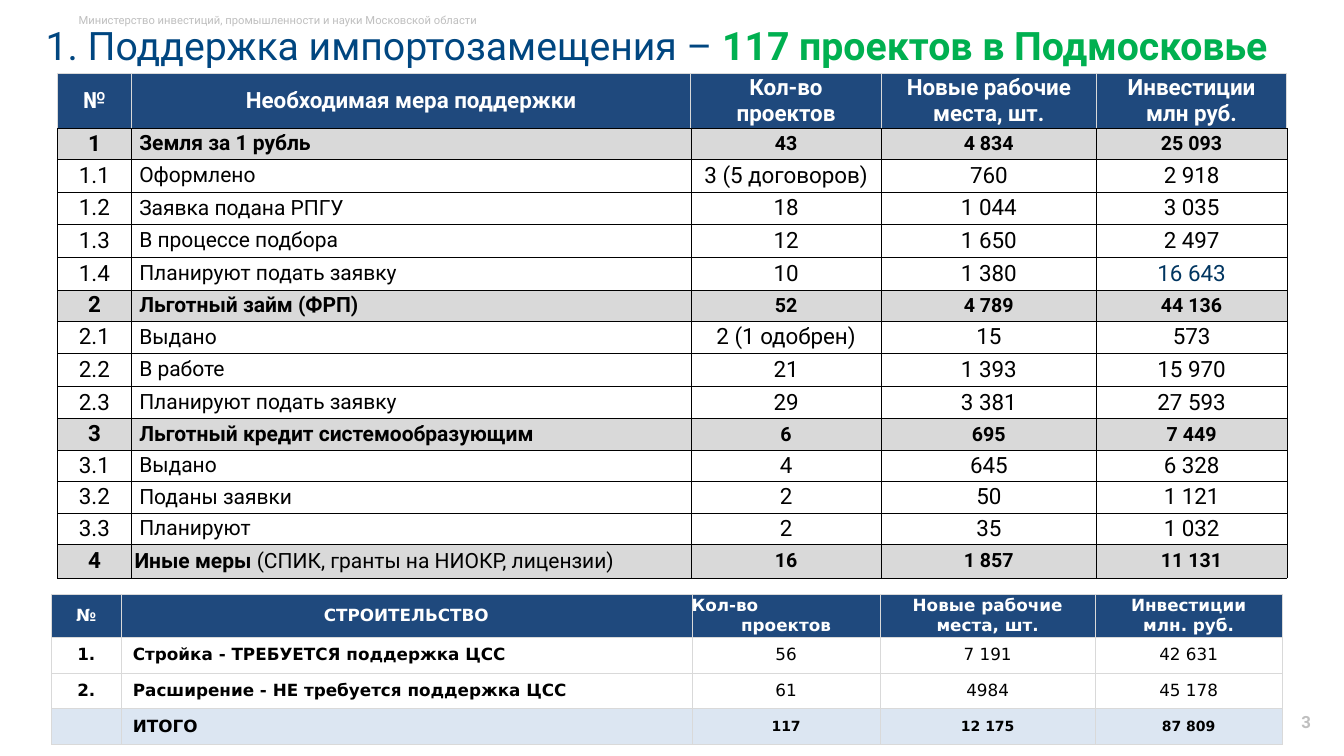
from dataclasses import dataclass

from lxml import etree
from pptx import Presentation
from pptx import util as u
from pptx.dml.color import RGBColor
from pptx.enum import text
from pptx.oxml.ns import qn

ALIGN = text.PP_ALIGN
ANCHOR = text.MSO_ANCHOR
NAVY, WHITE, BLACK, SILVER = "1F497D", "FFFFFF", "000000", "D9D9D9"
PALE_BLUE, FAINT_GRAY = "DCE6F2", "BFBFBF"
ROBOTO, DEJAVU = "Roboto", "DejaVu Sans"


@dataclass
class Line:
    color: str
    width: float


@dataclass
class Measure:
    number: str
    name: str
    values: tuple[str, str, str]
    height: float = 0.82
    section: bool = False


@dataclass
class Building:
    number: str
    name: str
    values: tuple[str, str, str]
    total: bool = False


GRID = Line(BLACK, 0.25)
HEADER_EDGE = Line(SILVER, 1)
THIN_EDGE = Line(SILVER, 0.25)

MEASURES = [
    Measure("1", "Земля за 1 рубль", ("43", "4 834", "25 093"), 0.79, True),
    Measure("1.1", "Оформлено", ("3 (5 договоров)", "760", "2 918")),
    Measure("1.2", "Заявка подана РПГУ", ("18", "1 044", "3 035")),
    Measure("1.3", "В процессе подбора", ("12", "1 650", "2 497")),
    Measure("1.4", "Планируют подать заявку", ("10", "1 380", "16 643")),
    Measure("2", "Льготный займ (ФРП)", ("52", "4 789", "44 136"), 0.79, True),
    Measure("2.1", "Выдано", ("2 (1 одобрен)", "15", "573")),
    Measure("2.2", "В работе", ("21", "1 393", "15 970")),
    Measure("2.3", "Планируют подать заявку", ("29", "3 381", "27 593")),
    Measure("3", "Льготный кредит системообразующим", ("6", "695", "7 449"), 0.79, True),
    Measure("3.1", "Выдано", ("4", "645", "6 328"), 0.79),
    Measure("3.2", "Поданы заявки", ("2", "50", "1 121"), 0.79),
    Measure("3.3", "Планируют", ("2", "35", "1 032"), 0.79),
    Measure("4", "Иные меры ", ("16", "1 857", "11 131"), 0.86, True),
]
BUILDINGS = [
    Building("1.", "Стройка - ТРЕБУЕТСЯ поддержка ЦСС", ("56", "7 191", "42 631")),
    Building("2.", "Расширение - НЕ требуется поддержка ЦСС", ("61", "4984", "45 178")),
    Building("", "ИТОГО", ("117", "12 175", "87 809"), True),
]


def rgb(color: str) -> RGBColor:
    return RGBColor.from_string(color)


def add_span(para, words: str, *, size: float, color: str = BLACK,
             bold: bool = False, font: str = ROBOTO):
    span = para.add_run()
    span.text = words
    span.font.size = u.Pt(size)
    span.font.name = font
    span.font.bold = bold
    span.font.color.rgb = rgb(color)
    return span


def add_box(page, left: float, top: float, width: float, height: float, *,
            anchor=ANCHOR.TOP, align=ALIGN.LEFT, wrap: bool = True):
    """Add an empty text box and return its first paragraph."""
    frame = page.shapes.add_textbox(u.Cm(left), u.Cm(top), u.Cm(width), u.Cm(height)).text_frame
    frame.margin_left = frame.margin_right = u.Cm(0.13)
    frame.margin_top = frame.margin_bottom = u.Cm(0.13)
    frame.word_wrap = wrap
    frame.vertical_anchor = anchor
    frame.paragraphs[0].alignment = align
    return frame.paragraphs[0]


def set_borders(cell, sides: dict[str, Line]) -> None:
    properties = cell._tc.get_or_add_tcPr()
    for index, side in enumerate("LRTB"):
        line = sides[side]
        edge = etree.Element(qn(f"a:ln{side}"), w=str(u.Pt(line.width)))
        fill = etree.SubElement(edge, qn("a:solidFill"))
        etree.SubElement(fill, qn("a:srgbClr"), val=line.color)
        properties.insert(index, edge)


def fill_cell(cell, words: str, *, edge: Line, bottom: Line | None = None,
              fill: str | None = None, left: float = 0, align=ALIGN.CENTER, **style) -> None:
    """Write one paragraph per line of words and format the cell."""
    cell.margin_left = u.Cm(left)
    cell.margin_right = cell.margin_top = cell.margin_bottom = 0
    cell.vertical_anchor = ANCHOR.MIDDLE
    frame = cell.text_frame
    for index, line in enumerate(words.split("\n")):
        para = frame.add_paragraph() if index else frame.paragraphs[0]
        para.alignment = align
        if line:
            add_span(para, line, **style)
    if fill:
        cell.fill.solid()
        cell.fill.fore_color.rgb = rgb(fill)
    else:
        cell.fill.background()
    set_borders(cell, {"L": edge, "R": edge, "T": edge, "B": bottom or edge})


def add_grid(page, left: float, top: float, widths: list[float], heights: list[float]):
    """Add a plain table with the given column widths and row heights."""
    table = page.shapes.add_table(len(heights), len(widths), u.Cm(left), u.Cm(top),
                                  u.Cm(sum(widths)), u.Cm(sum(heights))).table
    table.first_row = table.horz_banding = False
    for column, width in zip(table.columns, widths):
        column.width = u.Cm(width)
    for row, height in zip(table.rows, heights):
        row.height = u.Cm(height)
    return table


def add_measures(page) -> None:
    table = add_grid(page, 1.45, 1.85, [1.86, 14.1, 4.8, 5.42, 4.8],
                     [1.38] + [measure.height for measure in MEASURES])
    headings = ["№", "Необходимая мера поддержки", "Кол-во\nпроектов",
                "Новые рабочие места, шт.", "Инвестиции\nмлн руб."]
    for column, heading in enumerate(headings):
        fill_cell(table.cell(0, column), heading, edge=HEADER_EDGE, bottom=GRID,
                  fill=NAVY, size=16, color=WHITE, bold=True)
    for row, measure in enumerate(MEASURES, 1):
        shared = dict(edge=GRID, fill=SILVER if measure.section else None, bold=measure.section)
        last = row == len(MEASURES)
        fill_cell(table.cell(row, 0), measure.number, size=16, **shared)
        fill_cell(table.cell(row, 1), measure.name, size=15, align=ALIGN.LEFT,
                  left=0.08 if last else 0.2, **shared)
        for column, value in enumerate(measure.values, 2):
            fill_cell(table.cell(row, column), value, size=14 if measure.section else 16,
                      color="003560" if value == "16 643" else BLACK, **shared)
    other_measures = table.cell(len(MEASURES), 1).text_frame.paragraphs[0]
    add_span(other_measures, "(СПИК, гранты на НИОКР, лицензии)", size=15)


def add_buildings(page) -> None:
    table = add_grid(page, 1.3, 14.97, [1.75, 14.38, 4.76, 5.4, 4.73], [1.08, 0.9, 0.9, 0.9])
    headings = ["№", "СТРОИТЕЛЬСТВО", "Кол-во\nпроектов",
                "Новые рабочие места, шт.", "Инвестиции\nмлн. руб."]
    for column, heading in enumerate(headings):
        fill_cell(table.cell(0, column), heading, edge=THIN_EDGE, fill=NAVY,
                  size=12, color=WHITE, bold=True, font=DEJAVU)
    table.cell(0, 2).text_frame.paragraphs[0].alignment = ALIGN.LEFT
    for row, building in enumerate(BUILDINGS, 1):
        shared = dict(edge=THIN_EDGE, fill=PALE_BLUE if building.total else None, font=DEJAVU)
        fill_cell(table.cell(row, 0), building.number, size=12, bold=True, **shared)
        fill_cell(table.cell(row, 1), building.name, size=12, bold=True,
                  align=ALIGN.LEFT, left=0.3, **shared)
        for column, value in enumerate(building.values, 2):
            fill_cell(table.cell(row, column), value, size=10 if building.total else 12,
                      bold=building.total, **shared)


def main() -> None:
    deck = Presentation()
    deck.slide_width, deck.slide_height = u.Cm(33.87), u.Cm(19.05)
    page = deck.slides.add_slide(deck.slide_layouts[6])

    ministry = add_box(page, 1.85, 0.2, 14.35, 0.6)
    add_span(ministry, "Министерство инвестиций, промышленности и науки Московской области",
             size=8, color=FAINT_GRAY)
    title = add_box(page, 1.02, 0.41, 32.6, 1.45, anchor=ANCHOR.BOTTOM)
    title.line_spacing = 0.9
    add_span(title, "1. Поддержка импортозамещения – ", size=28, color="004680")
    add_span(title, "117 проектов в Подмосковье", size=28, color="00B050", bold=True)

    add_measures(page)
    add_buildings(page)

    page_number = add_box(page, 32.59, 17.8, 0.58, 0.8, anchor=ANCHOR.MIDDLE,
                          align=ALIGN.RIGHT, wrap=False)
    add_span(page_number, "3", size=12, color=FAINT_GRAY, bold=True)
    deck.save("out.pptx")


if __name__ == "__main__":
    main()
